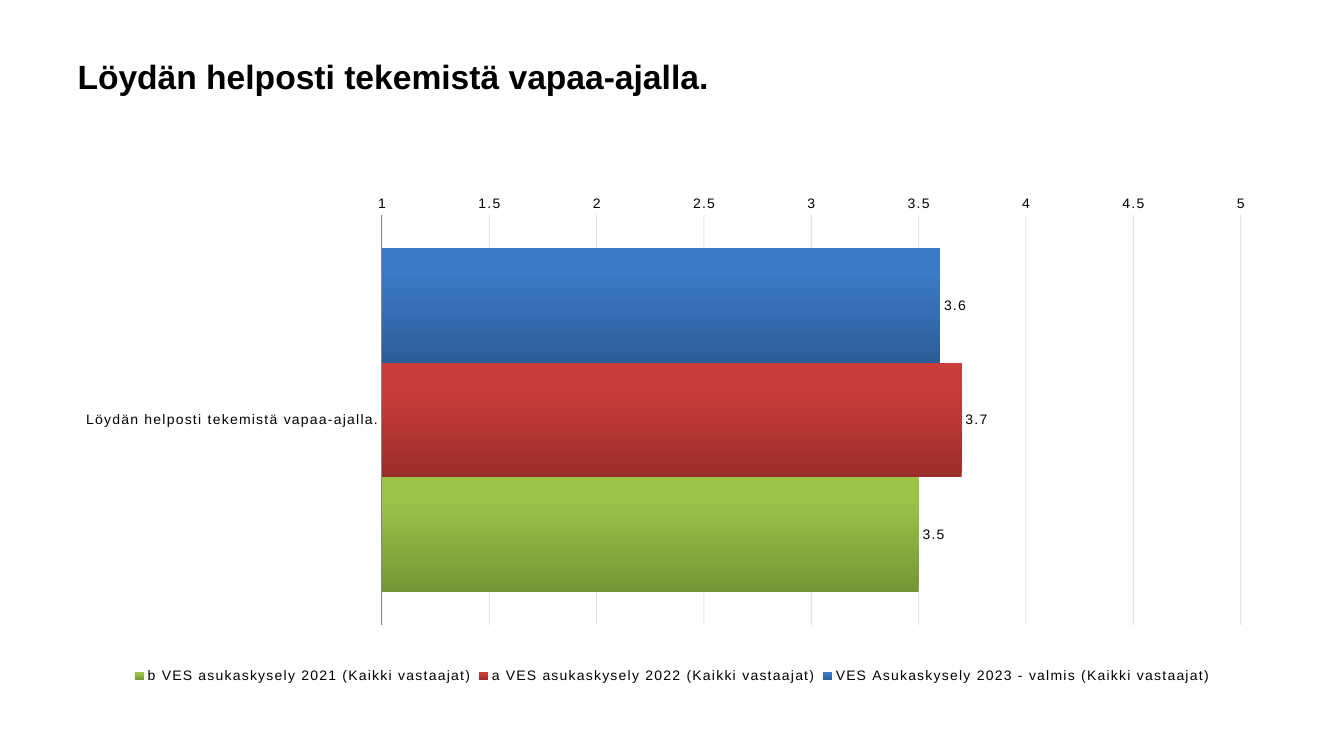
"""Builds a slide comparing three resident surveys in a bar chart."""
from dataclasses import dataclass

from lxml.etree import SubElement
from pptx import Presentation
from pptx.chart.data import CategoryChartData
from pptx.dml.color import RGBColor
from pptx.enum.chart import XL_AXIS_CROSSES as Crosses
from pptx.enum.chart import XL_CHART_TYPE as ChartType
from pptx.enum.chart import XL_LABEL_POSITION as LabelPosition
from pptx.enum.chart import XL_LEGEND_POSITION as LegendPosition
from pptx.enum.chart import XL_TICK_MARK as TickMark
from pptx.enum.text import MSO_ANCHOR, PP_ALIGN
from pptx.oxml.ns import qn
from pptx.util import Cm, Pt

QUESTION = "Löydän helposti tekemistä vapaa-ajalla."
SURVEYS = [
    ("VES Asukaskysely 2023 - valmis (Kaikki vastaajat)", 3.6, ("2C5D98", "3C7BC7")),
    ("a VES asukaskysely 2022 (Kaikki vastaajat)", 3.7, ("9B2D2A", "CB3D3A")),
    ("b VES asukaskysely 2021 (Kaikki vastaajat)", 3.5, ("769535", "9BC348")),
]
SCALE = {"minimum_scale": 1, "maximum_scale": 5, "major_unit": 0.5}
PLOT_LAYOUT = {"x": 0.26, "y": 0.02, "w": 0.71, "h": 0.85}
LEFT, WIDTH = Cm(1.7), Cm(30.48)


@dataclass(frozen=True)
class Theme:
    """Holds the colours and type sizes."""
    font: str = "Arial"
    text: str = "000000"
    grid: str = "4F81BD"
    axis: str = "868686"
    title_size: int = 24
    chart_size: int = 10
    letter_spacing: int = 100
    grid_alpha: int = 20000


THEME = Theme()


def style_font(font, size, bold=False):
    """Applies the theme font, size and colour."""
    font.name, font.size, font.bold = THEME.font, Pt(size), bold
    font.color.rgb = RGBColor.from_string(THEME.text)


def style_chart_font(owner):
    """Formats chart text with wide letter spacing."""
    style_font(owner.font, THEME.chart_size)
    for properties in owner._element.iter(qn("a:defRPr")):
        properties.set("spc", str(THEME.letter_spacing))


def add_title(slide):
    """Places the question in the title placeholder."""
    title = slide.shapes.title
    title.left, title.top, title.width, title.height = LEFT, Cm(0.91), WIDTH, Cm(2)
    frame = title.text_frame
    frame.text = QUESTION
    frame.vertical_anchor = MSO_ANCHOR.MIDDLE
    paragraph = frame.paragraphs[0]
    paragraph.alignment = PP_ALIGN.LEFT
    style_font(paragraph.runs[0].font, THEME.title_size, bold=True)


def style_axes(chart):
    """Formats both axes and the gridlines."""
    category_axis, value_axis = chart.category_axis, chart.value_axis
    for axis in (category_axis, value_axis):
        axis.major_tick_mark = axis.minor_tick_mark = TickMark.NONE
        style_chart_font(axis.tick_labels)
    category_axis.reverse_order = True
    category_axis.crosses = Crosses.MAXIMUM
    category_axis.format.line.color.rgb = RGBColor.from_string(THEME.axis)
    for name, value in SCALE.items():
        setattr(value_axis, name, value)
    value_axis.tick_labels.number_format = "General"
    value_axis.tick_labels.number_format_is_linked = False
    value_axis.format.line.fill.background()
    gridlines = value_axis.major_gridlines
    gridlines.format.line.width = Pt(0.75)
    gridlines.format.line.color.rgb = RGBColor.from_string(THEME.grid)
    color = next(gridlines.format.line._ln.iter(qn("a:srgbClr")))
    SubElement(color, qn("a:alpha"), val=str(THEME.grid_alpha))


def style_series(series, colors):
    """Gives a series its gradient and value labels."""
    series.invert_if_negative = False
    fill = series.format.fill
    fill.gradient()
    fill.gradient_angle = 90
    for stop, color, position in zip(fill.gradient_stops, colors, (0, 0.8)):
        stop.color.rgb = RGBColor.from_string(color)
        stop.position = position
    labels = series.data_labels
    labels.show_value = True
    labels.position = LabelPosition.OUTSIDE_END
    style_chart_font(labels)


def fix_plot_area(chart):
    """Sets the inner plot area as fractions of the chart."""
    plot_area = chart._chartSpace.chart.plotArea
    for layout in plot_area.findall(qn("c:layout")):
        plot_area.remove(layout)
    layout = SubElement(plot_area, qn("c:layout"))
    plot_area.insert(0, layout)
    manual = SubElement(layout, qn("c:manualLayout"))
    SubElement(manual, qn("c:layoutTarget"), val="inner")
    for name in ("xMode", "yMode"):
        SubElement(manual, qn(f"c:{name}"), val="edge")
    for name, value in PLOT_LAYOUT.items():
        SubElement(manual, qn(f"c:{name}"), val=str(value))


def add_survey_chart(slide):
    """Adds the chart with one bar per survey."""
    data = CategoryChartData()
    data.categories = [QUESTION]
    for name, value, _ in SURVEYS:
        data.add_series(name, [value])
    chart = slide.shapes.add_chart(
        ChartType.BAR_CLUSTERED, LEFT, Cm(4.93), WIDTH, Cm(12.4), data).chart
    style_font(chart.font, THEME.chart_size)
    chart.has_title = False
    chart.has_legend = True
    chart.legend.position = LegendPosition.BOTTOM
    chart.legend.include_in_layout = False
    style_chart_font(chart.legend)
    plot = chart.plots[0]
    plot.gap_width, plot.overlap, plot.vary_by_categories = 58, 0, False
    for series, (_, _, colors) in zip(plot.series, SURVEYS):
        style_series(series, colors)
    style_axes(chart)
    fix_plot_area(chart)


def main():
    """Builds and saves the presentation."""
    presentation = Presentation()
    presentation.slide_width, presentation.slide_height = Cm(33.87), Cm(19.05)
    slide = presentation.slides.add_slide(presentation.slide_layouts[5])
    add_title(slide)
    add_survey_chart(slide)
    presentation.save("out.pptx")


if __name__ == "__main__":
    main()
